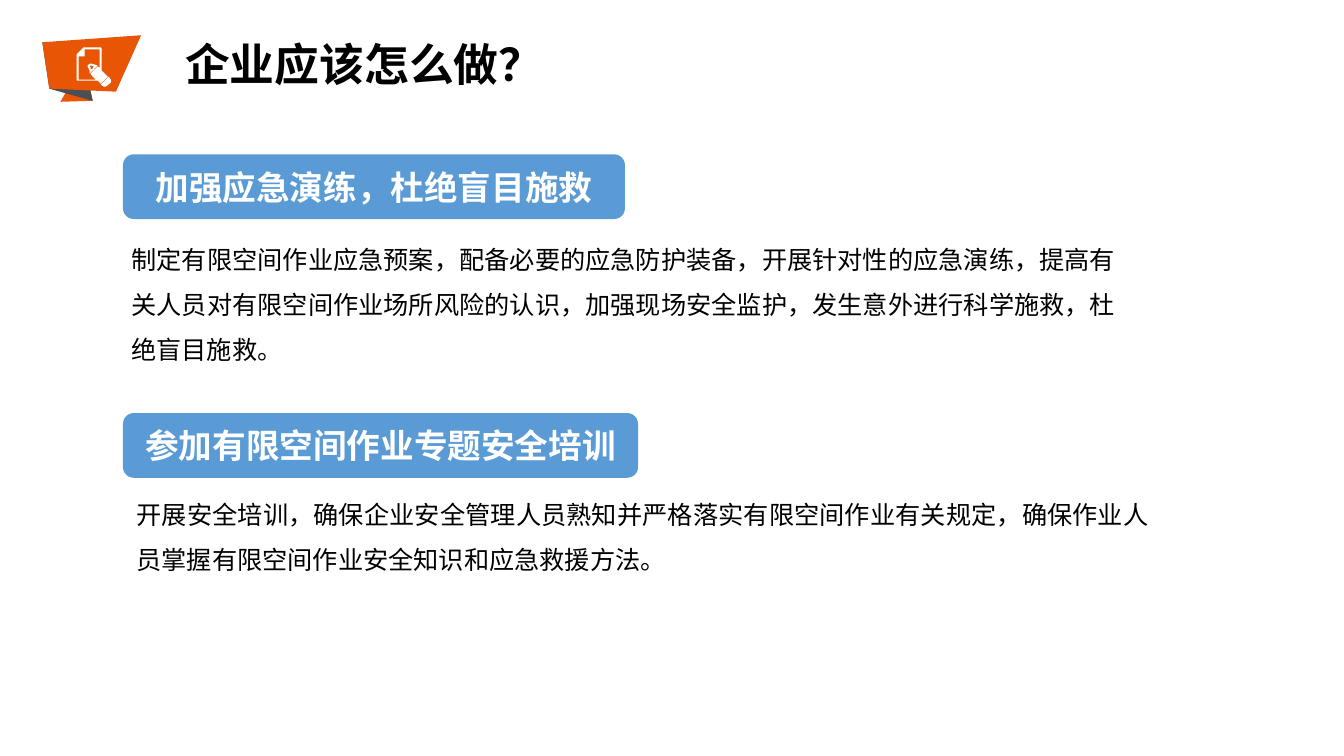
from lxml import etree
from pptx import Presentation
from pptx import util as u
from pptx.dml.color import RGBColor
from pptx.enum import shapes, text
from pptx.oxml.ns import qn

FONT = "Noto Sans CJK SC"
COLORS = {"orange": "E85504", "slate": "494F54", "blue": "5B9BD5",
          "white": "FFFFFF", "black": "000000"}

TITLE = ("企业应该怎么做？", (4.37, 1.3, 9.63, 1.17))

SECTIONS = [
    {"heading": "加强应急演练，杜绝盲目施救",
     "heading_box": (3.1, 3.89, 12.65, 1.63),
     "body": "制定有限空间作业应急预案，配备必要的应急防护装备，开展针对性的应急演练，"
             "提高有关人员对有限空间作业场所风险的认识，加强现场安全监护，"
             "发生意外进行科学施救，杜绝盲目施救。",
     "body_box": (2.11, 5.64, 26.26, 3.58)},
    {"heading": "参加有限空间作业专题安全培训",
     "heading_box": (3.1, 10.41, 12.98, 1.63),
     "body": "开展安全培训，确保企业安全管理人员熟知并严格落实有限空间作业有关规定，"
             "确保作业人员掌握有限空间作业安全知识和应急救援方法。",
     "body_box": (2.24, 12.07, 26.97, 2.57)},
]

ICON_UNIT = u.Cm(2.54) / 100
ICON = [
    ("orange", [[(92, 100), (83, 60), (60, 101)]]),
    ("slate", [[(83, 60), (42, 42), (49, 88), (92, 100)]]),
    ("orange", [[(140, 35), (42, 42), (49, 88), (115, 91)]]),
    ("white", [
        [(110, 82), (105, 86), (104, 86.5), (103, 86), (100, 84), (108, 76), (110, 79)],
        [(99, 49), (84, 49), (84, 55), (83.5, 56), (78, 56), (78, 79), (95, 79),
         (91, 75), (90, 73), (91, 72), (96, 67), (97, 66), (99, 67)],
        [(101, 82), (100, 83), (97, 80), (77, 80), (76, 79.5), (76, 55), (76.5, 54),
         (83, 47), (100, 47), (101, 48), (101, 70), (107, 76)],
        [(91, 65), (90, 65), (89, 65.5), (90, 67), (90, 69), (92, 68), (93, 66)],
        [(93, 69), (89, 73), (89, 70), (87, 66), (87, 65), (88, 64), (90, 63),
         (94, 64), (97, 65)],
    ]),
]


def color(name):
    return RGBColor.from_string(COLORS[name])


def paint(shape, name):
    shape.shadow.inherit = False
    shape.fill.solid()
    shape.fill.fore_color.rgb = color(name)
    shape.line.fill.background()


def write(shape, words, size, color_name, bold, alignment):
    paragraph = shape.text_frame.paragraphs[0]
    paragraph.alignment = alignment
    run = paragraph.add_run()
    run.text = words
    run.font.size = u.Pt(size)
    run.font.bold = bold
    run.font.color.rgb = color(color_name)
    run.font.name = FONT
    east_asian = etree.SubElement(run.font._element, qn("a:ea"))
    east_asian.set("typeface", FONT)
    return paragraph


def add_text(slide, box, wrap):
    shape = slide.shapes.add_textbox(*map(u.Cm, box))
    shape.text_frame.word_wrap = wrap
    shape.text_frame.auto_size = text.MSO_AUTO_SIZE.SHAPE_TO_FIT_TEXT
    return shape


def add_icon(slide):
    for color_name, contours in ICON:
        builder = slide.shapes.build_freeform(*contours[0][0], scale=ICON_UNIT)
        builder.add_line_segments(contours[0][1:], close=True)
        for contour in contours[1:]:
            builder.move_to(*contour[0])
            builder.add_line_segments(contour[1:], close=True)
        paint(builder.convert_to_shape(), color_name)


def add_title(slide):
    words, box = TITLE
    shape = add_text(slide, box, False)
    paragraph = write(shape, words, 32, "black", True, text.PP_ALIGN.CENTER)
    paragraph.line_spacing = u.Pt(24)


def add_section(slide, section):
    heading = slide.shapes.add_shape(shapes.MSO_SHAPE.ROUNDED_RECTANGLE,
                                     *map(u.Cm, section["heading_box"]))
    paint(heading, "blue")
    heading.text_frame.vertical_anchor = text.MSO_ANCHOR.MIDDLE
    write(heading, section["heading"], 24, "white", True, text.PP_ALIGN.CENTER)

    body = add_text(slide, section["body_box"], True)
    paragraph = write(body, section["body"], 18, "black", False, text.PP_ALIGN.JUSTIFY)
    paragraph.line_spacing = 1.5
    properties = paragraph._p.get_or_add_pPr()
    properties.set("marL", str(u.Cm(0.95)))
    properties.set("indent", "0")


def main():
    presentation = Presentation()
    presentation.slide_width = u.Cm(33.87)
    presentation.slide_height = u.Cm(19.05)
    slide = presentation.slides.add_slide(presentation.slide_layouts[6])
    add_icon(slide)
    add_title(slide)
    for section in SECTIONS:
        add_section(slide, section)
    presentation.save("out.pptx")


if __name__ == "__main__":
    main()
